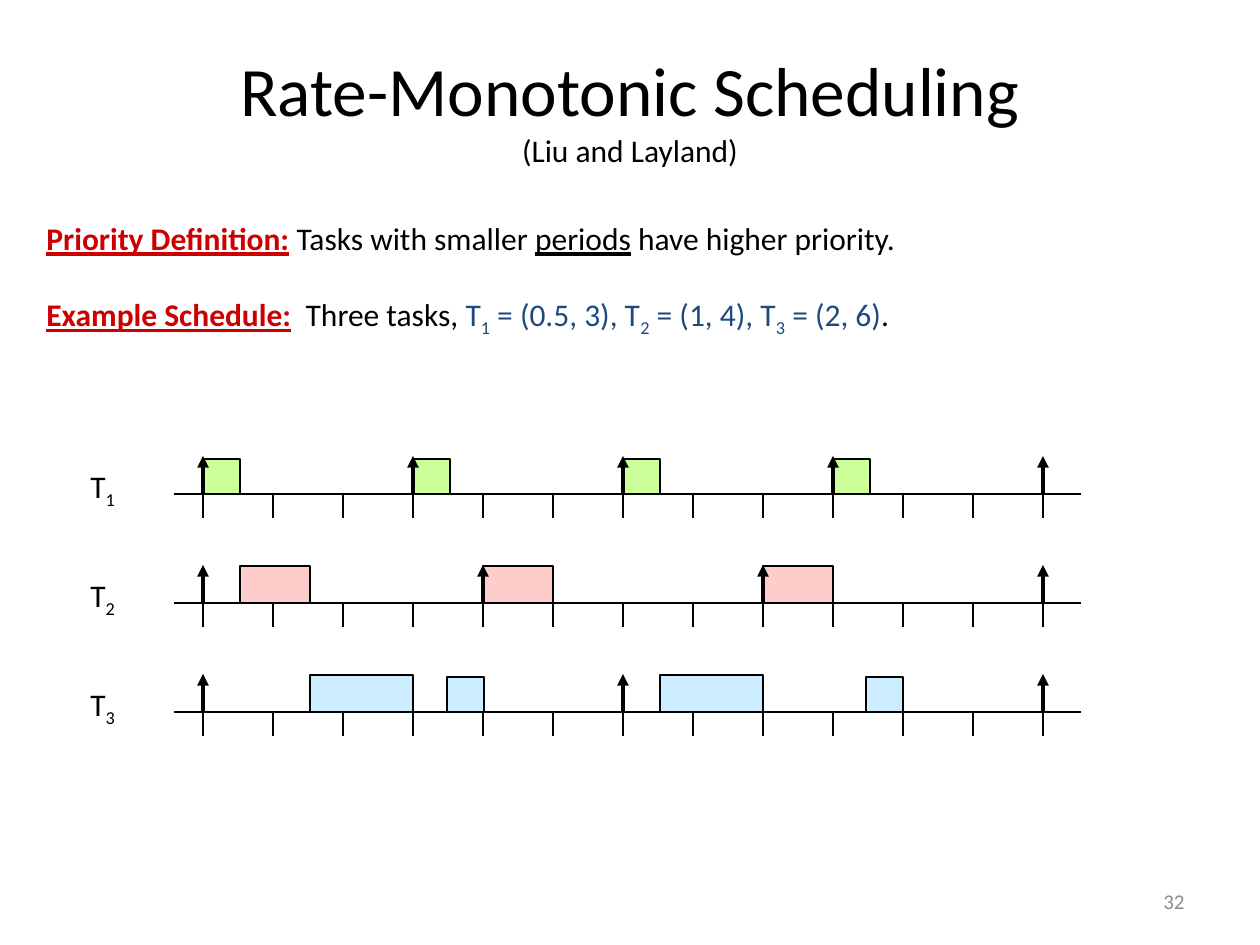
from pptx import Presentation
from pptx.dml.color import RGBColor
from pptx.enum.shapes import MSO_CONNECTOR, MSO_SHAPE
from pptx.enum.text import MSO_ANCHOR, MSO_AUTO_SIZE, PP_ALIGN
from pptx.oxml.ns import qn
from pptx.util import Emu, Pt
from lxml.etree import SubElement

EMU_PER_PX = 914400 / 126
BLACK, RED, NAVY, GRAY = "000000", "CC0000", "1F497D", "8C8C8C"

# Timeline grid: one time unit is UNIT wide, time 0 sits at ORIGIN
ORIGIN, UNIT, SPAN = 203, 70, 12
FIRST_AXIS, ROW_GAP = 494, 109
HALF = 0.53  # drawn length of a half-unit job

# Task number: (period, fill, jobs as (start, length))
TASKS = {
    1: (3, "CCFF99", [(0, HALF), (3, HALF), (6, HALF), (9, HALF)]),
    2: (4, "FFCCCC", [(HALF, 1), (4, 1), (8, 1)]),
    3: (6, "CCECFF", [(1.53, 1.47), (3.48, HALF), (6.53, 1.47), (9.47, HALF)]),
}

HEADING = {"color": RED, "bold": True, "underline": True}
BLUE = {"color": NAVY}
BLUE_SUB = {"color": NAVY, "baseline": -25000}


def px(length):
    return Emu(round(length * EMU_PER_PX))


def rgb(value):
    return RGBColor.from_string(value)


def time_x(time):
    return round(ORIGIN + time * UNIT)


class Slide:
    font_name = "Calibri"
    font_size = 18

    def __init__(self, deck):
        self.page = deck.slides.add_slide(deck.slide_layouts[5])

    def span(self, para, text, size=None, color=BLACK, baseline=None, **format_values):
        span = para.add_run()
        span.text = text
        values = {"name": self.font_name, "size": Pt(size or self.font_size), **format_values}
        for name, value in values.items():
            setattr(span.font, name, value)
        span.font.color.rgb = rgb(color)
        if baseline:
            span._r.get_or_add_rPr().set("baseline", str(baseline))

    def title(self, left, top, width, height, heading, credit):
        box = self.page.shapes.title
        place = {"left": left, "top": top, "width": width, "height": height}
        for name, value in place.items():
            setattr(box, name, px(value))
        box.text_frame.vertical_anchor = MSO_ANCHOR.MIDDLE
        para = box.text_frame.paragraphs[0]
        para.alignment = PP_ALIGN.CENTER
        self.span(para, heading, size=39.6)
        para.add_line_break()
        self.span(para, credit)

    def text(self, left, top, width, height, lines, align=PP_ALIGN.LEFT, gap=0, **frame_values):
        box = self.page.shapes.add_textbox(px(left), px(top), px(width), px(height))
        frame = box.text_frame
        values = {"word_wrap": False, "auto_size": MSO_AUTO_SIZE.SHAPE_TO_FIT_TEXT, **frame_values}
        for name, value in values.items():
            setattr(frame, name, value)
        for index, spans in enumerate(lines):
            para = frame.add_paragraph() if index else frame.paragraphs[0]
            para.alignment = align
            para.space_before = Pt(gap if index else 0)
            for content, style in spans:
                self.span(para, content, **style)

    def job(self, left, top, width, height, fill):
        shape = self.page.shapes.add_shape(
            MSO_SHAPE.RECTANGLE, px(left), px(top), px(width), px(height))
        shape.shadow.inherit = False
        shape.fill.solid()
        shape.fill.fore_color.rgb = rgb(fill)
        shape.line.color.rgb = rgb(BLACK)
        shape.line.width = Pt(1)

    def line(self, x1, y1, x2, y2, weight=1, arrow=False):
        connector = self.page.shapes.add_connector(
            MSO_CONNECTOR.STRAIGHT, px(x1), px(y1), px(x2), px(y2))
        connector.line.color.rgb = rgb(BLACK)
        connector.line.width = Pt(weight)
        if arrow:
            SubElement(connector.line._get_or_add_ln(), qn("a:tailEnd"), type="triangle")
        SubElement(connector._element.spPr, qn("a:effectLst"))


def draw_task(slide, number, period, fill, jobs):
    axis = FIRST_AXIS + (number - 1) * ROW_GAP

    # Executed jobs
    for start, length in jobs:
        left, right = time_x(start), time_x(start + length)
        height = 35 if length == HALF else 37
        slide.job(left, axis - height, right - left, height, fill)

    # Axis with a tick per time unit
    slide.line(174, axis, 1081, axis)
    for time in range(SPAN + 1):
        slide.line(time_x(time), axis, time_x(time), axis + 24)

    # Release arrows, one per period
    for time in range(0, SPAN + 1, period):
        slide.line(time_x(time), axis, time_x(time), axis - 38, weight=2.25, arrow=True)

    # Task label
    slide.text(78, axis - 33, 66, 63, [[("T", {}), (str(number), {"baseline": -25000})]])


def main():
    deck = Presentation()
    deck.slide_width, deck.slide_height = px(1260), px(945)
    slide = Slide(deck)

    # Title and definitions
    slide.title(0, 45, 1260, 126, "Rate-Monotonic Scheduling", "(Liu and Layland)")
    slide.text(34, 213, 915, 127, [
        [("Priority Definition:", HEADING), (" Tasks with smaller ", {}),
         ("periods", {"underline": True}), (" have higher priority.", {})],
        [("Example Schedule:", HEADING), ("  Three tasks, ", {}),
         ("T", BLUE), ("1", BLUE_SUB), (" = (0.5, 3), T", BLUE), ("2", BLUE_SUB),
         (" = (1, 4), T", BLUE), ("3", BLUE_SUB), (" = (2, 6)", BLUE), (".", {})],
    ], gap=22)

    # Schedule
    for number, (period, fill, jobs) in TASKS.items():
        draw_task(slide, number, period, fill, jobs)

    # Slide number
    slide.text(903, 876, 294, 50, [[("32", {"size": 12, "color": GRAY})]],
               align=PP_ALIGN.RIGHT, word_wrap=True, auto_size=MSO_AUTO_SIZE.NONE,
               vertical_anchor=MSO_ANCHOR.MIDDLE)

    deck.save("out.pptx")


if __name__ == "__main__":
    main()
